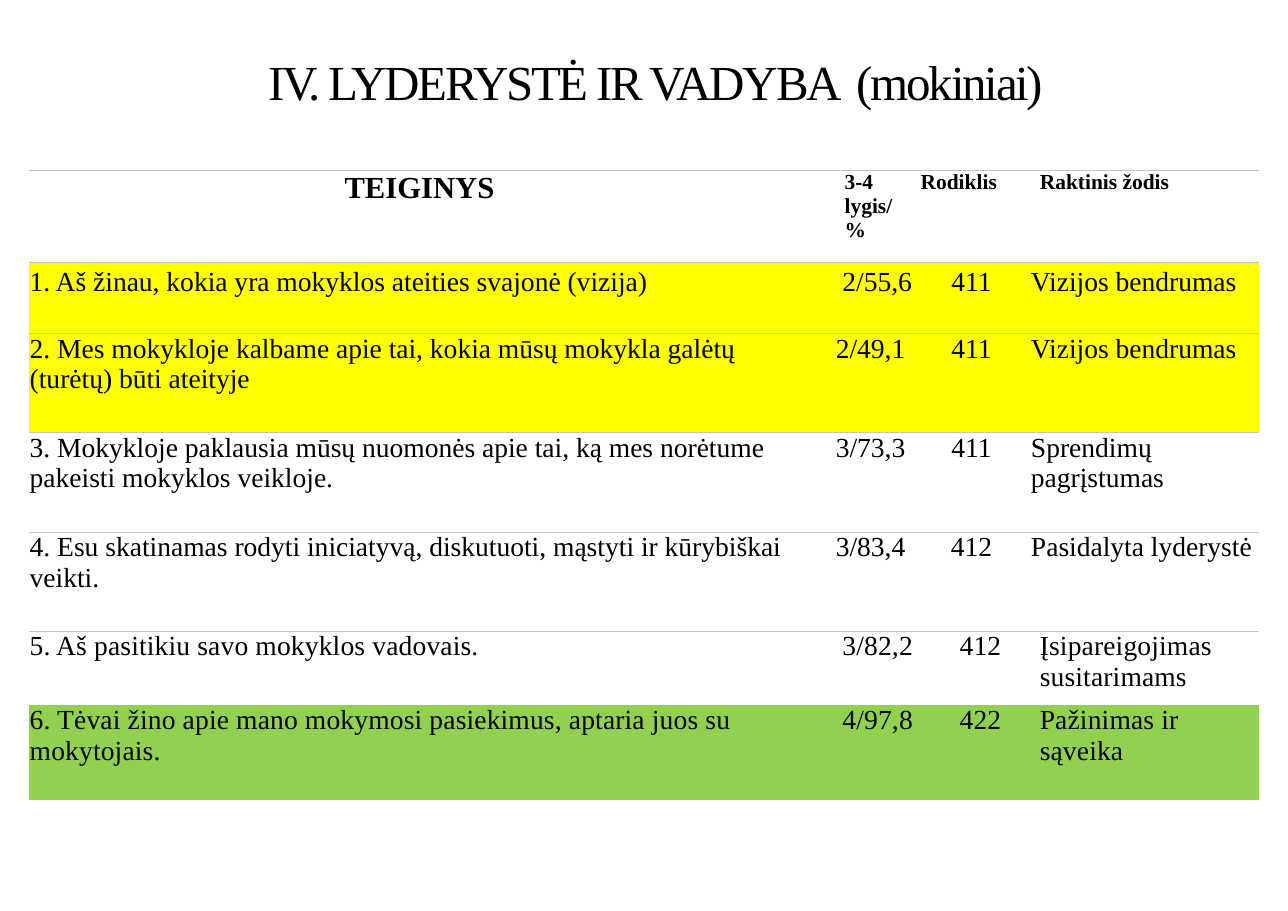
from dataclasses import dataclass
from typing import NamedTuple

from lxml import etree
from pptx import Presentation
from pptx.dml.color import RGBColor
from pptx.enum.text import MSO_ANCHOR, MSO_AUTO_SIZE, PP_ALIGN
from pptx.oxml.ns import qn
from pptx.util import Inches, Pt

LEFT, CENTER = PP_ALIGN.LEFT, PP_ALIGN.CENTER
TOP = MSO_ANCHOR.TOP
NO_AUTOFIT = MSO_AUTO_SIZE.NONE
TITLE_ONLY = 5


@dataclass(frozen=True)
class Theme:
    """Colours, font and type sizes of the deck."""
    font: str = "Times New Roman"
    ink: str = "000000"
    rule: str = "C6C6C1"
    weak: str = "FFFF00"
    strong: str = "92D050"
    title_size: int = 32
    lead_size: int = 20
    header_size: int = 14
    body_size: int = 18
    rule_width: float = 0.75


THEME = Theme()


class Box(NamedTuple):
    """Place of a region in inches."""
    left: float
    top: float
    width: float
    height: float


class Layout(NamedTuple):
    """Alignment, left indent and right margin of a cell, in inches."""
    align: PP_ALIGN
    indent: float = 0
    right: float = 0


class Row(NamedTuple):
    """Texts, cell layouts and look of one table row."""
    height: float
    texts: tuple
    layouts: tuple
    fill: str | None = None
    spacing: float = 1
    tracking: float = 0
    ruled: bool = True


SLIDE = Box(0, 0, 11.69, 8.27)
TITLE_BOX = Box(2.2, 0.46, 7.5, 0.55)
TABLE_BOX = Box(0.26, 1.55, 11.17, 5.71)
COLUMNS = (7.08, 0.97, 0.94, 2.17)

STATEMENT = Layout(LEFT, 0.01)
SCORE, SHIFTED_SCORE = Layout(CENTER, 0.14), Layout(LEFT, 0.3)
CODE, SHIFTED_CODE = Layout(CENTER, 0.06), Layout(PP_ALIGN.RIGHT, 0, 0.17)
KEYWORD, SHIFTED_KEYWORD = Layout(LEFT, 0.1), Layout(LEFT, 0.18)

HEADER = (Layout(CENTER, 0.01), Layout(LEFT, 0.32), Layout(CENTER, 0, 0.17), SHIFTED_KEYWORD)
FIRST = (STATEMENT, SHIFTED_SCORE, CODE, KEYWORD)
MIDDLE = (STATEMENT, SCORE, CODE, KEYWORD)
LAST = (STATEMENT, SHIFTED_SCORE, SHIFTED_CODE, SHIFTED_KEYWORD)

TITLE = "IV. LYDERYSTĖ IR VADYBA  (mokiniai)"
ROWS = (
    Row(0.83, ("TEIGINYS", "3-4 lygis/\n%", "Rodiklis", "Raktinis žodis"), HEADER),
    Row(0.65, ("1. Aš žinau, kokia yra mokyklos ateities svajonė (vizija)",
               "2/55,6", "411", "Vizijos bendrumas"), FIRST, THEME.weak, 1.17),
    Row(0.9, ("2. Mes mokykloje kalbame apie tai, kokia mūsų mokykla galėtų (turėtų) būti ateityje",
              "2/49,1", "411", "Vizijos bendrumas"), MIDDLE, THEME.weak),
    Row(0.9, ("3. Mokykloje paklausia mūsų nuomonės apie tai, ką mes norėtume pakeisti mokyklos veikloje.",
              "3/73,3", "411", "Sprendimų pagrįstumas"), MIDDLE),
    Row(0.9, ("4. Esu skatinamas rodyti iniciatyvą, diskutuoti, mąstyti ir kūrybiškai veikti.",
              "3/83,4", "412", "Pasidalyta lyderystė"), MIDDLE),
    Row(0.67, ("5. Aš pasitikiu savo mokyklos vadovais.",
               "3/82,2", "412", "Įsipareigojimas susitarimams"), LAST, tracking=0.1),
    Row(0.86, ("6. Tėvai žino apie mano mokymosi pasiekimus, aptaria juos su mokytojais.",
               "4/97,8", "422", "Pažinimas ir sąveika"), LAST, THEME.strong,
        tracking=0.1, ruled=False),
)


def style_para(para, size, bold=False, tracking=0):
    """Set the font of a paragraph and the letter spacing of its runs."""
    font = para.font
    font.name, font.size, font.bold = THEME.font, Pt(size), bold
    font.color.rgb = RGBColor.from_string(THEME.ink)
    if tracking:
        for span in para.runs:
            span._r.get_or_add_rPr().set("spc", str(round(tracking * 100)))


def add_borders(cell, ruled_sides):
    """Draw the named sides of a cell and clear the others."""
    properties = cell._tc.get_or_add_tcPr()
    for position, side in enumerate(("lnL", "lnR", "lnT", "lnB")):
        line = etree.Element(qn(f"a:{side}"), w=str(Pt(THEME.rule_width)))
        if side in ruled_sides:
            fill = etree.SubElement(line, qn("a:solidFill"))
            etree.SubElement(fill, qn("a:srgbClr"), val=THEME.rule)
        else:
            etree.SubElement(line, qn("a:noFill"))
        properties.insert(position, line)


def fill_cell(cell, text, layout, row, size, bold):
    """Write and format one table cell."""
    cell.margin_left = cell.margin_top = cell.margin_bottom = 0
    cell.margin_right = Inches(layout.right)
    cell.vertical_anchor = TOP
    if row.fill:
        cell.fill.solid()
        cell.fill.fore_color.rgb = RGBColor.from_string(row.fill)
    else:
        cell.fill.background()
    cell.text_frame.text = text
    for para in cell.text_frame.paragraphs:
        para.alignment, para.line_spacing = layout.align, row.spacing
        para._p.get_or_add_pPr().set("marL", str(Inches(layout.indent)))
        style_para(para, size, bold, row.tracking)


def add_title(page, box):
    """Place the page title in its box."""
    title = page.shapes.title
    title.left, title.top, title.width, title.height = map(Inches, box)
    frame = title.text_frame
    frame.text = TITLE
    frame.auto_size, frame.vertical_anchor, frame.word_wrap = NO_AUTOFIT, TOP, True
    frame.margin_left = frame.margin_right = frame.margin_bottom = 0
    frame.margin_top = Inches(0.01)
    para = frame.paragraphs[0]
    para.alignment, para.space_before = CENTER, Pt(1)
    style_para(para, THEME.title_size, tracking=-1.5)


def add_survey_table(page, box):
    """Share the box among the columns and rows of survey answers."""
    table = page.shapes.add_table(len(ROWS), len(COLUMNS), *map(Inches, box)).table
    table.first_row = table.horz_banding = False
    for column, share in zip(table.columns, COLUMNS):
        column.width = Inches(box.width * share / sum(COLUMNS))
    total_height = sum(row.height for row in ROWS)
    for number, row in enumerate(ROWS):
        table.rows[number].height = Inches(box.height * row.height / total_height)
        next_ruled = number + 1 < len(ROWS) and ROWS[number + 1].ruled
        sides = {"lnT"} if row.ruled else set()
        if next_ruled:
            sides.add("lnB")
        for index, (text, layout) in enumerate(zip(row.texts, row.layouts)):
            header = number == 0
            size = THEME.header_size if header else THEME.body_size
            if header and index == 0:
                size = THEME.lead_size
            cell = table.cell(number, index)
            fill_cell(cell, text, layout, row, size, header)
            add_borders(cell, sides)


def main():
    """Build the one-page deck and save it."""
    deck = Presentation()
    deck.slide_width, deck.slide_height = Inches(SLIDE.width), Inches(SLIDE.height)
    page = deck.slides.add_slide(deck.slide_layouts[TITLE_ONLY])
    add_title(page, TITLE_BOX)
    add_survey_table(page, TABLE_BOX)
    deck.save("out.pptx")


if __name__ == "__main__":
    main()
